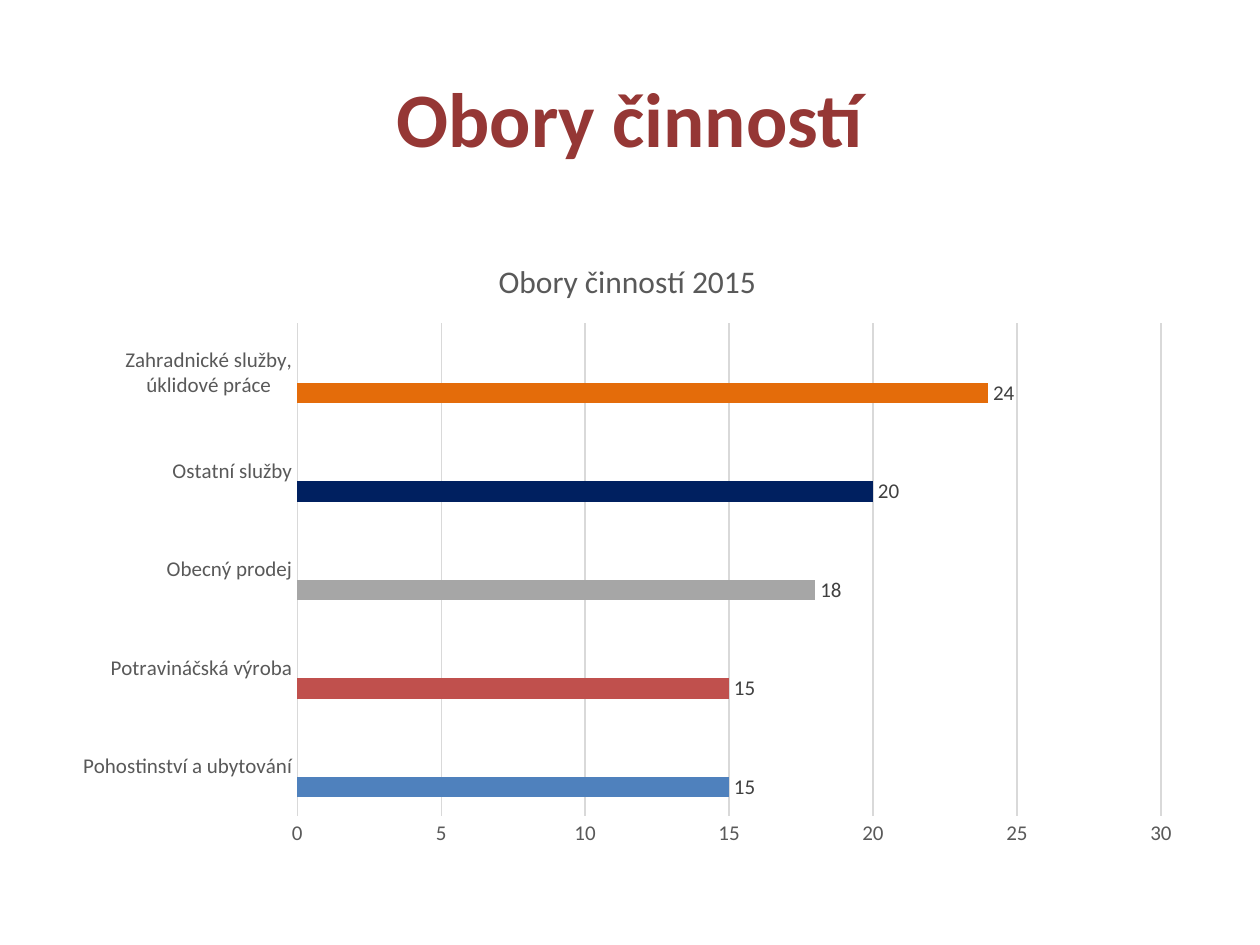
"""Build a slide with a bar chart of business fields in 2015."""
from dataclasses import dataclass

import pptx
import pptx.chart.data
import pptx.dml.color
import pptx.enum.chart
import pptx.enum.text
import pptx.util

Pt = pptx.util.Pt
RGBColor = pptx.dml.color.RGBColor

FONT = "Calibri"
MAROON = RGBColor(0x95, 0x37, 0x35)
BLUE = RGBColor(0x4F, 0x81, 0xBD)
RED = RGBColor(0xC0, 0x50, 0x4D)
GREEN = RGBColor(0x9B, 0xBB, 0x59)
GREY = RGBColor(0xA6, 0xA6, 0xA6)
NAVY = RGBColor(0x00, 0x20, 0x60)
ORANGE = RGBColor(0xE4, 0x6C, 0x0A)
AXIS_TEXT = RGBColor(0x59, 0x59, 0x59)
LABEL_TEXT = RGBColor(0x40, 0x40, 0x40)
GRID = RGBColor(0xD9, 0xD9, 0xD9)
BLACK = RGBColor(0, 0, 0)


@dataclass
class Field:
    name: str
    count: int
    color: RGBColor


FIELDS = [
    Field("Pohostinství a ubytování", 15, BLUE),
    Field("Potravináčská výroba", 15, RED),
    Field("Obecný prodej", 18, GREY),
    Field("Ostatní služby", 20, NAVY),
    Field("Zahradnické služby, úklidové práce", 24, ORANGE),
]


def set_font(font, size: float, color: RGBColor, bold: bool = False) -> None:
    font.name, font.size, font.bold = FONT, Pt(size), bold
    font.color.rgb = color


def set_text(tf, text: str, *, size: float, color: RGBColor, bold: bool = False) -> None:
    p = tf.paragraphs[0]
    p.alignment = pptx.enum.text.PP_ALIGN.CENTER
    r = p.add_run()
    r.text = text
    set_font(r.font, size, color, bold)


def set_fill(fill, color: RGBColor) -> None:
    fill.solid()
    fill.fore_color.rgb = color


def set_line(line, color: RGBColor) -> None:
    line.width = Pt(0.75)
    line.color.rgb = color


def format_axis(axis) -> None:
    axis.major_tick_mark = axis.minor_tick_mark = pptx.enum.chart.XL_TICK_MARK.NONE
    set_font(axis.tick_labels.font, 12, AXIS_TEXT)


def add_fields_chart(s) -> None:
    data = pptx.chart.data.CategoryChartData()
    data.categories = [field.name for field in FIELDS]
    data.add_series("Series 1", [field.count for field in FIELDS])
    for name in ("Series 2", "Series 3"):
        data.add_series(name, [None] * len(FIELDS))
    chart = s.shapes.add_chart(
        pptx.enum.chart.XL_CHART_TYPE.BAR_CLUSTERED,
        Pt(34.5), Pt(134), Pt(648), Pt(356.5), data).chart
    set_font(chart.font, 10, BLACK)
    chart.has_legend = False
    chart.has_title = True
    set_text(chart.chart_title.text_frame, "Obory činností 2015", size=18, color=AXIS_TEXT)
    chart.chart_title.include_in_layout = False

    format_axis(chart.category_axis)
    set_line(chart.category_axis.format.line, GRID)
    axis = chart.value_axis
    format_axis(axis)
    axis.minimum_scale, axis.maximum_scale, axis.major_unit = 0, 30, 5
    axis.format.line.fill.background()
    set_line(axis.major_gridlines.format.line, GRID)

    plot = chart.plots[0]
    plot.gap_width = 182
    plot.vary_by_categories = False
    for series, color in zip(plot.series, (BLUE, RED, GREEN)):
        set_fill(series.format.fill, color)
    counts = plot.series[0]
    for i, field in enumerate(FIELDS):
        set_fill(counts.points[i].format.fill, field.color)
    labels = counts.data_labels
    labels.show_value = True
    labels.position = pptx.enum.chart.XL_LABEL_POSITION.OUTSIDE_END
    set_font(labels.font, 12, LABEL_TEXT)


def main() -> None:
    prs = pptx.Presentation()
    prs.slide_width, prs.slide_height = Pt(720), Pt(540)
    s = prs.slides.add_slide(prs.slide_layouts[5])
    sp = s.shapes.title
    sp.left, sp.top, sp.width, sp.height = Pt(36), Pt(21.6), Pt(648), Pt(90)
    tf = sp.text_frame
    tf.vertical_anchor = pptx.enum.text.MSO_ANCHOR.MIDDLE
    set_text(tf, "Obory činností", size=44, color=MAROON, bold=True)
    add_fields_chart(s)
    prs.save("out.pptx")


if __name__ == "__main__":
    main()
